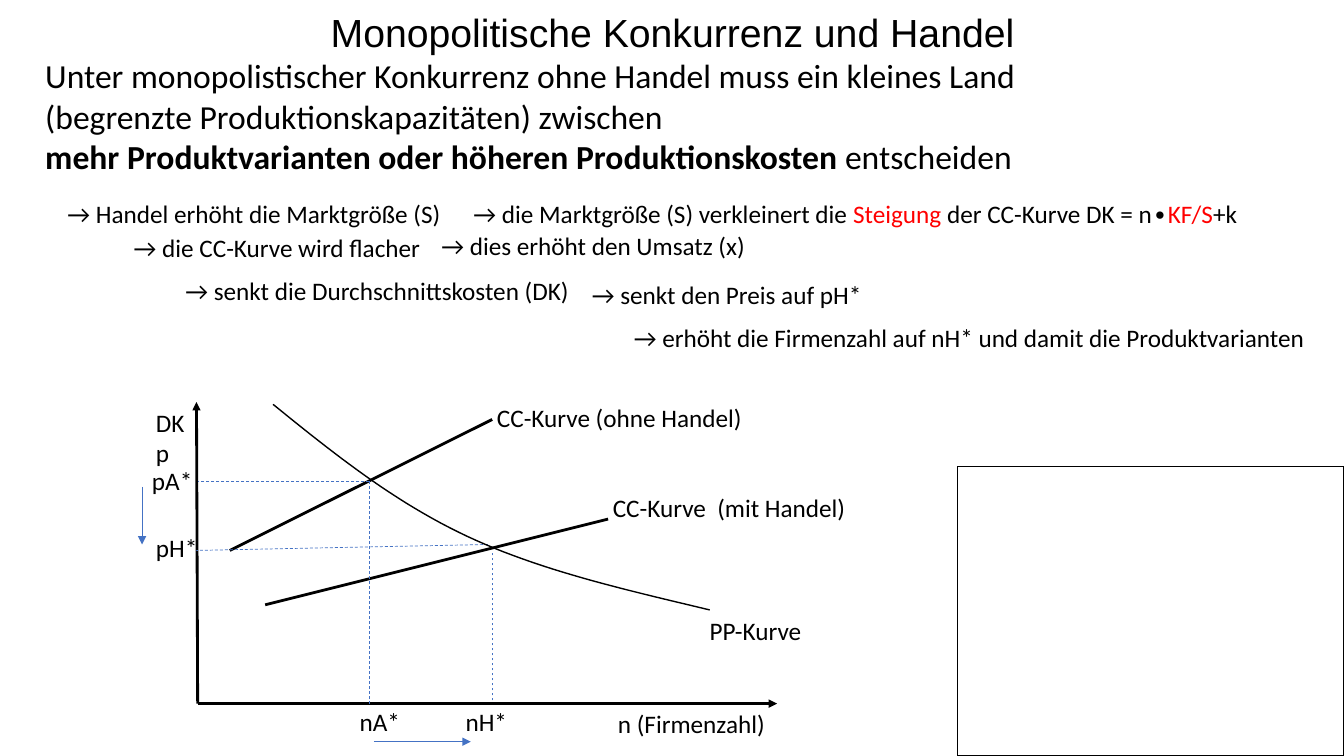
from lxml import etree
from pptx import Presentation
from pptx.dml.color import RGBColor
from pptx.enum.dml import MSO_LINE
from pptx.enum.shapes import MSO_CONNECTOR, MSO_SHAPE
from pptx.enum.text import MSO_ANCHOR, PP_ALIGN
from pptx.oxml.ns import qn
from pptx.util import Cm, Pt

STRAIGHT = MSO_CONNECTOR.STRAIGHT
RECT = MSO_SHAPE.RECTANGLE
DASH = MSO_LINE.DASH
MIDDLE = MSO_ANCHOR.MIDDLE
CENTER = PP_ALIGN.CENTER
BLACK, RED, BLUE = "000000", "FF0000", "4472C4"

INTRO = [
    [("Unter monopolistischer Konkurrenz ohne Handel muss ein kleines Land "
      "(begrenzte Produktionskapazitäten) zwischen", False, BLACK)],
    [("mehr Produktvarianten oder höheren Produktionskosten ", True, BLACK),
     ("entscheiden", False, BLACK)],
]
SLOPE = [[
    ("→ die Marktgröße (S) verkleinert die ", False, BLACK),
    ("Steigung", False, RED),
    (" der CC-Kurve DK = n∙", False, BLACK),
    ("KF/S", False, RED),
    ("+k", False, BLACK),
]]

# left, top, width, text
STEPS = [
    (1.45, 4.88, 10.03, "→ Handel erhöht die Marktgröße (S)"),
    (3.12, 5.72, 7.82, "→ die CC-Kurve wird flacher"),
    (10.87, 5.69, 8.26, "→ dies erhöht den Umsatz (x)"),
    (4.42, 6.81, 10.31, "→ senkt die Durchschnittskosten (DK)"),
    (14.66, 6.91, 7.39, "→ senkt den Preis auf pH*"),
    (15.72, 8, 17.63,
     "→ erhöht die Firmenzahl auf nH* und damit die Produktvarianten"),
]
LABELS = [
    (3.68, 10.13, 1.24, "DK\np"),
    (15.32, 17.73, 4.27, "n (Firmenzahl)"),
    (12.27, 10.01, 6.76, "CC-Kurve (ohne Handel)"),
    (15.19, 12.27, 6.45, "CC-Kurve  (mit Handel)"),
    (17.63, 15.39, 2.87, "PP-Kurve"),
    (3.58, 11.61, 1.55, "pA*"),
    (3.68, 13.28, 1.57, "pH*"),
    (8.81, 17.68, 1.55, "nA*"),
    (11.48, 17.68, 1.57, "nH*"),
]

# start x, start y, end x, end y
AXES = [(4.98, 17.73, 4.95, 10.13), (4.98, 17.73, 19.58, 17.73)]
COSTS = [(5.79, 13.87, 12.4, 10.57), (6.68, 15.24, 15.32, 13.08)]
GUIDES = [
    (9.3, 12.12, 4.98, 12.12), (9.3, 17.73, 9.3, 12.12),
    (12.29, 13.72, 4.95, 13.87), (12.4, 17.65, 12.4, 13.92),
]
SHIFTS = [(3.58, 12.27, 3.58, 13.72), (9.42, 18.69, 11.86, 18.69)]

# Two cubic arcs that share their middle point
PRICE = [(6.88, 10.19), (8.41, 11.43), (9.93, 12.65), (11.76, 13.51),
         (13.61, 14.38), (15.75, 14.86), (17.88, 15.37)]


def color(code):
    return RGBColor.from_string(code)


def style(font, size, name="Calibri"):
    font.size, font.name = Pt(size), name
    font.color.rgb = color(BLACK)


def add_text(slide, left, top, width, height, paras, size, wrap=False):
    box = slide.shapes.add_textbox(Cm(left), Cm(top), Cm(width), Cm(height))
    frame = box.text_frame
    frame.word_wrap = wrap
    for i, runs in enumerate(paras):
        para = frame.add_paragraph() if i else frame.paragraphs[0]
        style(para.font, size)
        for text, bold, code in runs:
            run = para.add_run()
            run.text = text
            if bold:
                run.font.bold = True
            if code != BLACK:
                run.font.color.rgb = color(code)


def add_label(slide, left, top, width, text):
    rows = text.split("\n")
    paras = [[(row, False, BLACK)] for row in rows]
    add_text(slide, left, top, width, 0.25 + 0.77 * len(rows), paras, 18)


def add_line(slide, ends, code, width, dash=False, arrow=False):
    line = slide.shapes.add_connector(STRAIGHT, *(Cm(v) for v in ends))
    line.line.color.rgb = color(code)
    line.line.width = Pt(width)
    if dash:
        line.line.dash_style = DASH
    props = line._element.spPr
    if arrow:
        tip = etree.SubElement(props.find(qn("a:ln")), qn("a:tailEnd"))
        tip.set("type", "triangle")
    etree.SubElement(props, qn("a:effectLst"))


def outline(shape, width):
    shape.shadow.inherit = False
    shape.fill.background()
    shape.line.color.rgb = color(BLACK)
    shape.line.width = Pt(width)


def arc_point(arc, t):
    weights = ((1 - t) ** 3, 3 * t * (1 - t) ** 2, 3 * t * t * (1 - t), t ** 3)
    return tuple(Cm(sum(w * spot[axis] for w, spot in zip(weights, arc)))
                 for axis in (0, 1))


def add_curve(slide, spots, steps=24):
    points = [arc_point(spots[i:i + 4], n / steps)
              for i in range(0, len(spots) - 1, 3)
              for n in range(1, steps + 1)]
    start = [Cm(v) for v in spots[0]]
    pen = slide.shapes.build_freeform(*start, scale=1.0)
    pen.add_line_segments(points, close=False)
    outline(pen.convert_to_shape(), 1)


def set_title(slide, text):
    title = slide.shapes.title
    title.left, title.top = Cm(4.24), Cm(-0.08)
    title.width, title.height = Cm(25.4), Cm(1.78)
    title.text_frame.text = text
    title.text_frame.vertical_anchor = MIDDLE
    para = title.text_frame.paragraphs[0]
    para.alignment = CENTER
    style(para.font, 28, "Arial")


def main():
    deck = Presentation()
    deck.slide_width, deck.slide_height = Cm(33.86), Cm(19.05)
    slide = deck.slides.add_slide(deck.slide_layouts[5])

    # Title and introduction
    set_title(slide, "Monopolitische Konkurrenz und Handel")
    add_text(slide, 0.89, 1.27, 25.4, 15.34, INTRO, 24, wrap=True)

    # Chain of effects
    add_text(slide, 11.68, 4.88, 19.74, 1.02, SLOPE, 18)
    for step in STEPS:
        add_label(slide, *step)

    # Diagram
    for ends in AXES:
        add_line(slide, ends, BLACK, 2, arrow=True)
    for ends in COSTS:
        add_line(slide, ends, BLACK, 2)
    for ends in GUIDES:
        add_line(slide, ends, BLUE, 0.5, dash=True)
    for ends in SHIFTS:
        add_line(slide, ends, BLUE, 0.5, arrow=True)
    add_curve(slide, PRICE)
    for label in LABELS:
        add_label(slide, *label)

    # Empty frame in the corner
    frame = slide.shapes.add_shape(
        RECT, Cm(24.13), Cm(11.76), Cm(9.73), Cm(7.29))
    outline(frame, 1)

    deck.save("out.pptx")


if __name__ == "__main__":
    main()
